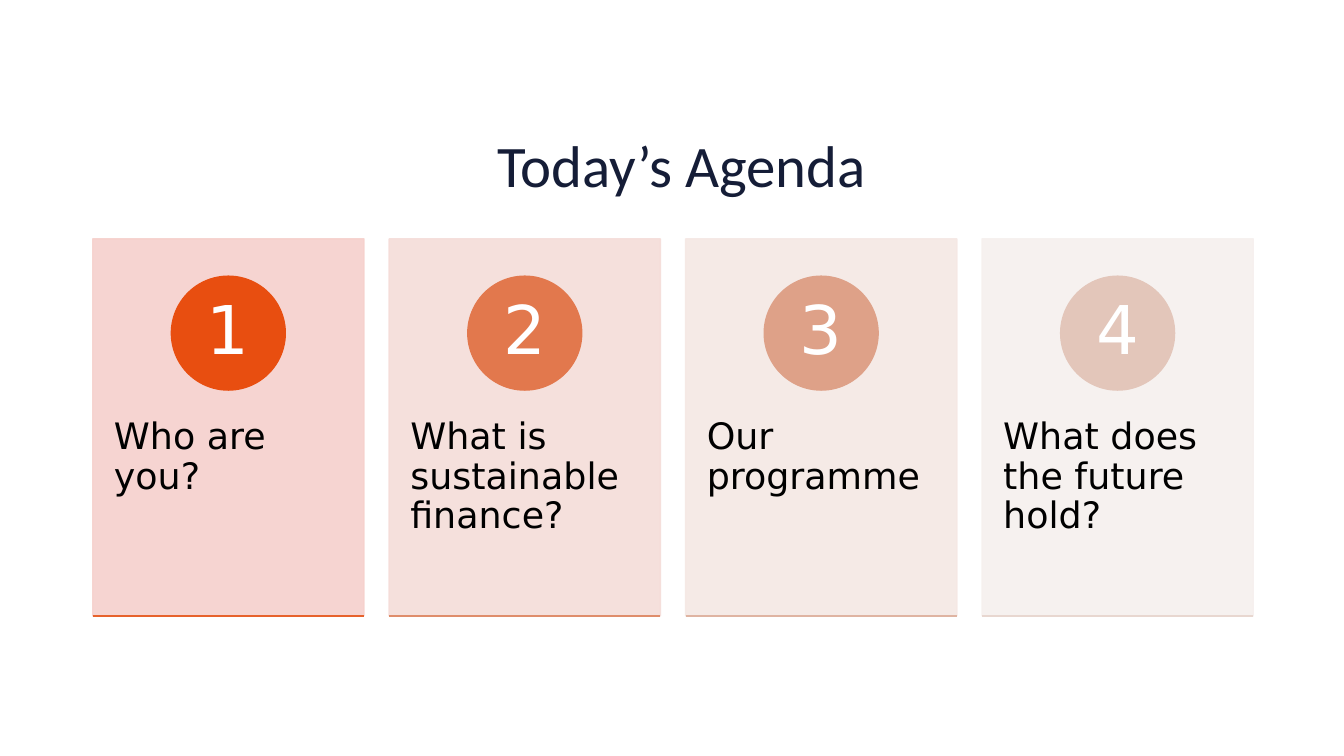
from lxml import etree
from pptx import Presentation
from pptx.dml.color import RGBColor
from pptx.enum.shapes import MSO_CONNECTOR as CONNECTOR, MSO_SHAPE as SHAPE
from pptx.enum.text import MSO_ANCHOR as ANCHOR, PP_ALIGN as ALIGN
from pptx.oxml.ns import qn
from pptx.util import Inches, Pt


def paint(shape, color):
    shape.shadow.inherit = False
    shape.fill.solid()
    shape.fill.fore_color.rgb = RGBColor.from_string(color)
    shape.line.color.rgb = RGBColor.from_string(color)
    shape.line.width = Pt(1)


def write(frame, text, font, size, color, align, anchor, margin_x=0, margin_y=0):
    frame.word_wrap = True
    frame.vertical_anchor = anchor
    frame.margin_left = frame.margin_right = Inches(margin_x)
    frame.margin_top = frame.margin_bottom = Inches(margin_y)
    frame.text = text
    paragraph = frame.paragraphs[0]
    paragraph.alignment = align
    paragraph.line_spacing = 0.9
    paragraph.font.name = font
    paragraph.font.size = Pt(size)
    paragraph.font.color.rgb = RGBColor.from_string(color)


# Topic, card colour, badge colour, base line colour
agenda = [
    ("Who are you?", "F6D0CC", "E84E10", "E7622C"),
    ("What is sustainable finance?", "F5DDD9", "E2784D", "DF8D6B"),
    ("Our programme", "F5E8E4", "DEA188", "DFB4A2"),
    ("What does the future hold?", "F6F0EE", "E3C6BA", "E8D7D0"),
]
FIRST_LEFT, STEP = 0.92, 2.94
CARD_TOP, CARD_WIDTH, CARD_HEIGHT = 2.37, 2.69, 3.74
BADGE_SIZE = 1.13

prs = Presentation()
prs.slide_width, prs.slide_height = Inches(13.33), Inches(7.5)
slide = prs.slides.add_slide(prs.slide_layouts[5])
shapes = slide.shapes

title = shapes.title
title.left, title.top = Inches(1.01), Inches(1.36)
title.width, title.height = Inches(11.5), Inches(1.45)
write(title.text_frame, "Today’s Agenda", "Calibri", 42, "151D37", ALIGN.CENTER, ANCHOR.TOP)

for number, (topic, card_color, badge_color, base_color) in enumerate(agenda, 1):
    left = FIRST_LEFT + (number - 1) * STEP
    base = CARD_TOP + CARD_HEIGHT

    card = shapes.add_shape(SHAPE.RECTANGLE, Inches(left), Inches(CARD_TOP),
                            Inches(CARD_WIDTH), Inches(CARD_HEIGHT))
    paint(card, card_color)
    for color in card.element.spPr.iter(qn("a:srgbClr")):
        etree.SubElement(color, qn("a:alpha"), val="90000")

    label = shapes.add_textbox(Inches(left), Inches(3.79), Inches(CARD_WIDTH), Inches(2.25))
    write(label.text_frame, topic, "DejaVu Sans", 26, "000000", ALIGN.LEFT, ANCHOR.TOP, 0.21, 0.36)

    badge = shapes.add_shape(SHAPE.OVAL, Inches(left + (CARD_WIDTH - BADGE_SIZE) / 2),
                             Inches(2.74), Inches(BADGE_SIZE), Inches(BADGE_SIZE))
    paint(badge, badge_color)
    write(badge.text_frame, str(number), "DejaVu Sans", 48, "FFFFFF", ALIGN.CENTER,
          ANCHOR.MIDDLE, 0.09, 0.01)

    base_line = shapes.add_connector(CONNECTOR.STRAIGHT, Inches(left), Inches(base),
                                     Inches(left + CARD_WIDTH), Inches(base))
    base_line.line.color.rgb = RGBColor.from_string(base_color)
    base_line.line.width = Pt(1)
    etree.SubElement(base_line.element.spPr, qn("a:effectLst"))

prs.save("out.pptx")
